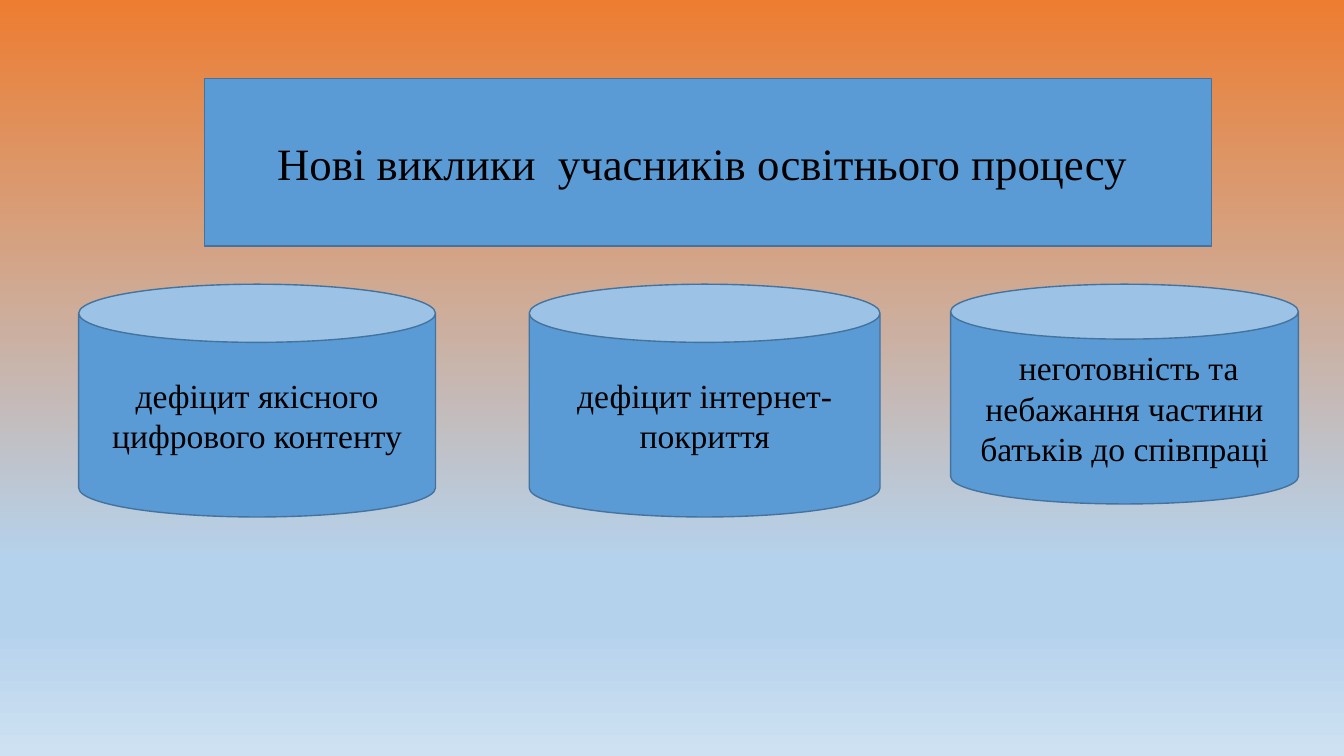
from dataclasses import dataclass

from lxml.etree import SubElement
from pptx import Presentation
from pptx.dml.color import RGBColor as Rgb
from pptx.enum.shapes import MSO_SHAPE as Form
from pptx.enum.text import MSO_ANCHOR as Anchor, MSO_AUTO_SIZE as Fit, PP_ALIGN as Align
from pptx.oxml.ns import qn
from pptx.shapes.autoshape import Shape
from pptx.slide import Slide
from pptx.util import Pt


@dataclass(frozen=True)
class Theme:
    font: str = "Times New Roman"
    head: int = 32
    body: int = 24
    ink: str = "000000"
    fill: str = "5B9BD5"
    edge: str = "43739E"
    sky: tuple[tuple[int, str], ...] = (
        (0, "ED7D31"), (74, "B5D2EC"), (83, "B5D2EC"), (100, "CEE1F2"))


@dataclass(frozen=True)
class Can:
    left: float
    width: float
    height: float
    text: str


THEME = Theme()
TOP = 203
HEAD = "Нові виклики  учасників освітнього процесу "
CANS = (
    Can(56.2, 254.9, 166.3, "дефіцит якісного цифрового контенту"),
    Can(378, 250.6, 166.3, "дефіцит інтернет-покриття"),
    Can(679, 248.4, 157, " неготовність та небажання частини батьків до співпраці"),
)


def paint(slide: Slide) -> None:
    """Fill the background with the vertical gradient."""
    fill = slide.background.fill
    fill.gradient()
    fill.gradient_angle = 270
    stops = slide.element.find(".//" + qn("a:gsLst"))
    stops.clear()
    for place, color in THEME.sky:
        stop = SubElement(stops, qn("a:gs"), pos=str(place * 1000))
        SubElement(stop, qn("a:srgbClr"), val=color)


def dress(shape: Shape, text: str, size: int) -> None:
    """Give a shape its fill, outline and centred text."""
    shape.fill.solid()
    shape.fill.fore_color.rgb = Rgb.from_string(THEME.fill)
    shape.line.color.rgb = Rgb.from_string(THEME.edge)
    shape.line.width = Pt(1)
    frame = shape.text_frame
    frame.text = text
    frame.word_wrap = True
    frame.auto_size = Fit.NONE
    frame.vertical_anchor = Anchor.MIDDLE
    para = frame.paragraphs[0]
    para.alignment = Align.CENTER
    para.font.name = THEME.font
    para.font.size = Pt(size)
    para.font.color.rgb = Rgb.from_string(THEME.ink)


def add_head(slide: Slide) -> None:
    """Turn the title placeholder into the wide hexagon."""
    title = slide.shapes.title
    title.left, title.top = Pt(146.2), Pt(56.2)
    title.width, title.height = Pt(719.3), Pt(119.5)
    geom = SubElement(title.element.spPr, qn("a:prstGeom"), prst="flowChartPreparation")
    SubElement(geom, qn("a:avLst"))
    dress(title, HEAD, THEME.head)


def add_can(slide: Slide, can: Can) -> None:
    """Draw one challenge as a cylinder."""
    shape = slide.shapes.add_shape(
        Form.CAN, Pt(can.left), Pt(TOP), Pt(can.width), Pt(can.height))
    shape.shadow.inherit = False
    dress(shape, can.text, THEME.body)


def main() -> None:
    deck = Presentation()
    deck.slide_width, deck.slide_height = Pt(960), Pt(540)
    slide = deck.slides.add_slide(deck.slide_layouts[5])

    # Background and heading
    paint(slide)
    add_head(slide)

    # Row of challenges
    for can in CANS:
        add_can(slide, can)

    deck.save("out.pptx")


if __name__ == "__main__":
    main()
